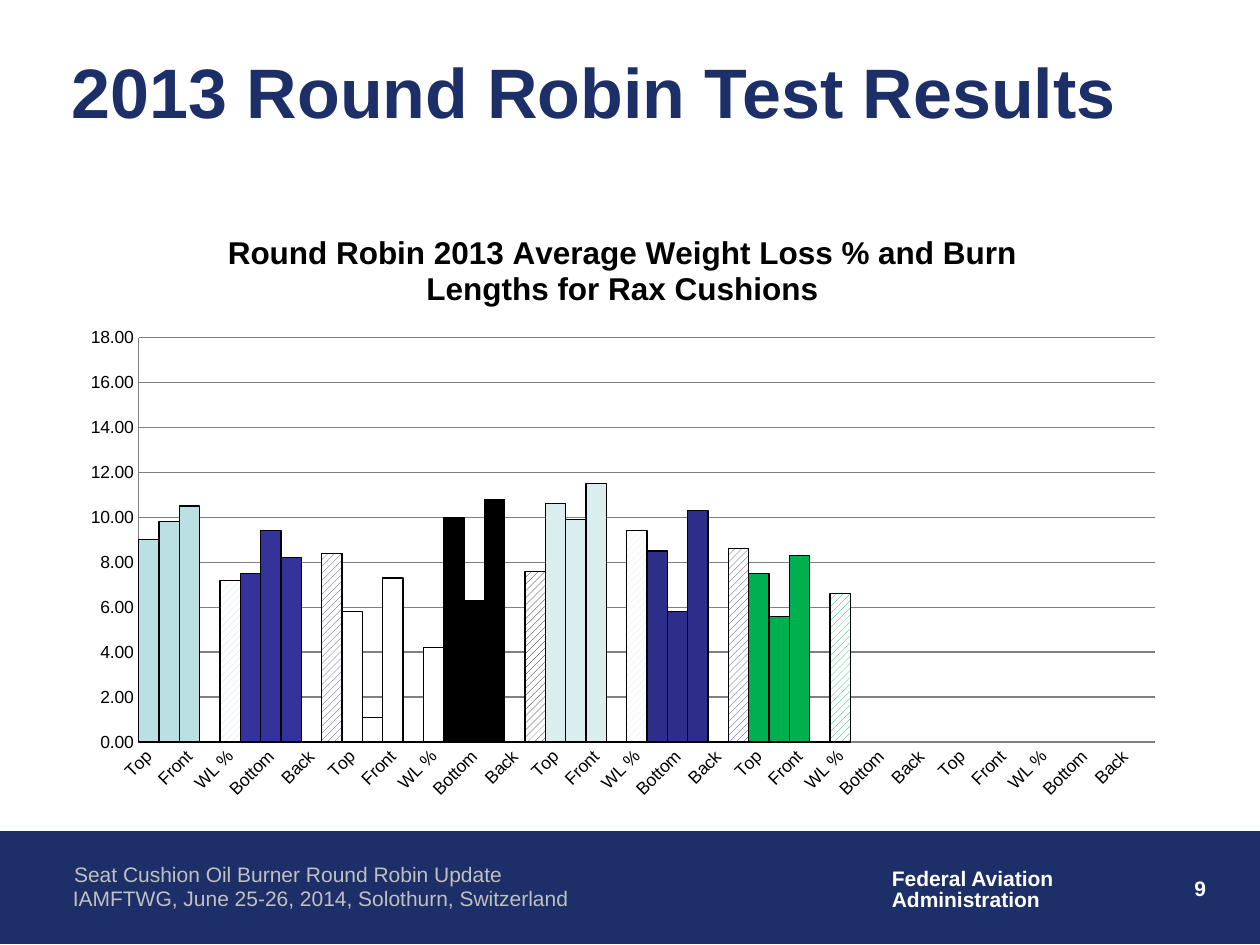
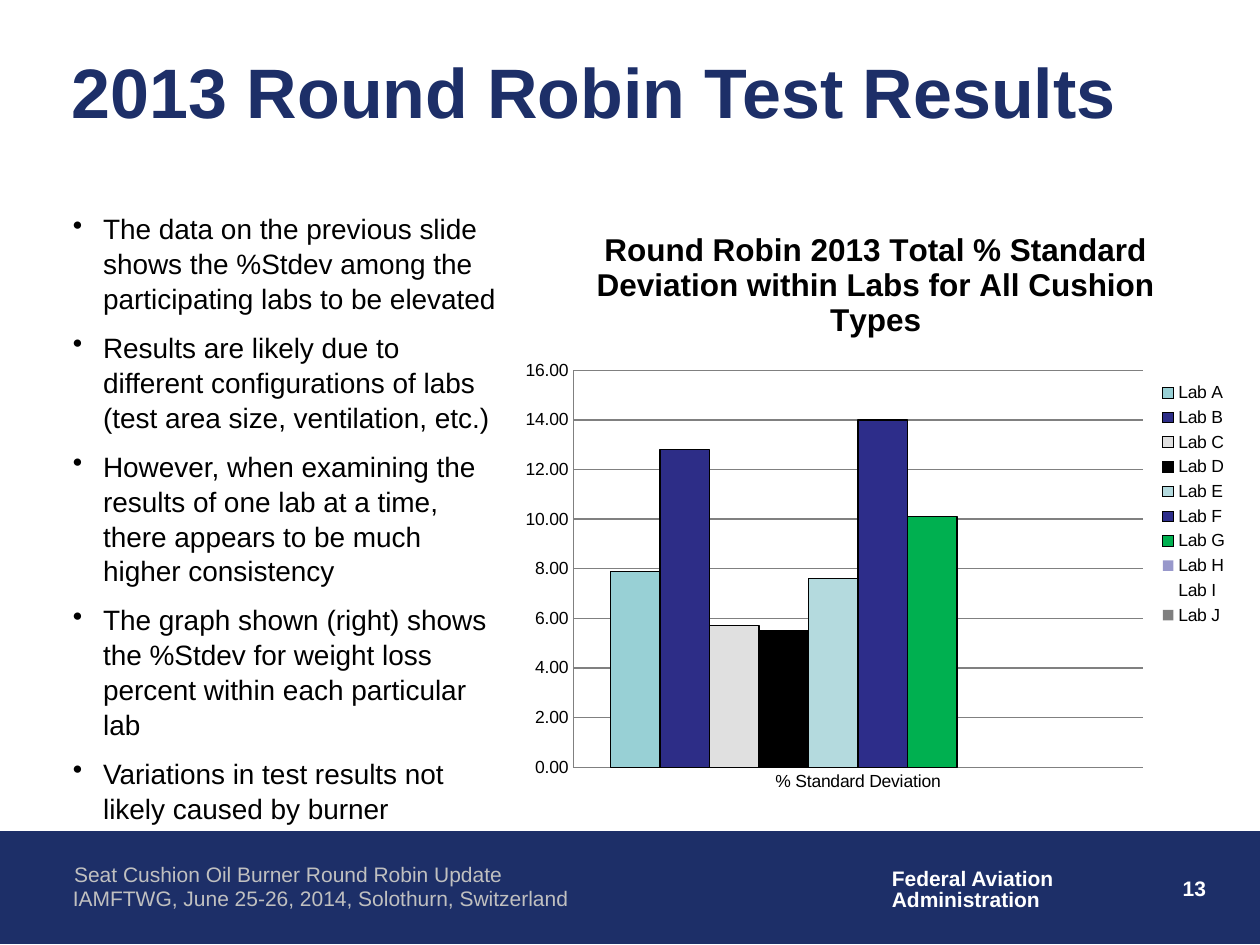
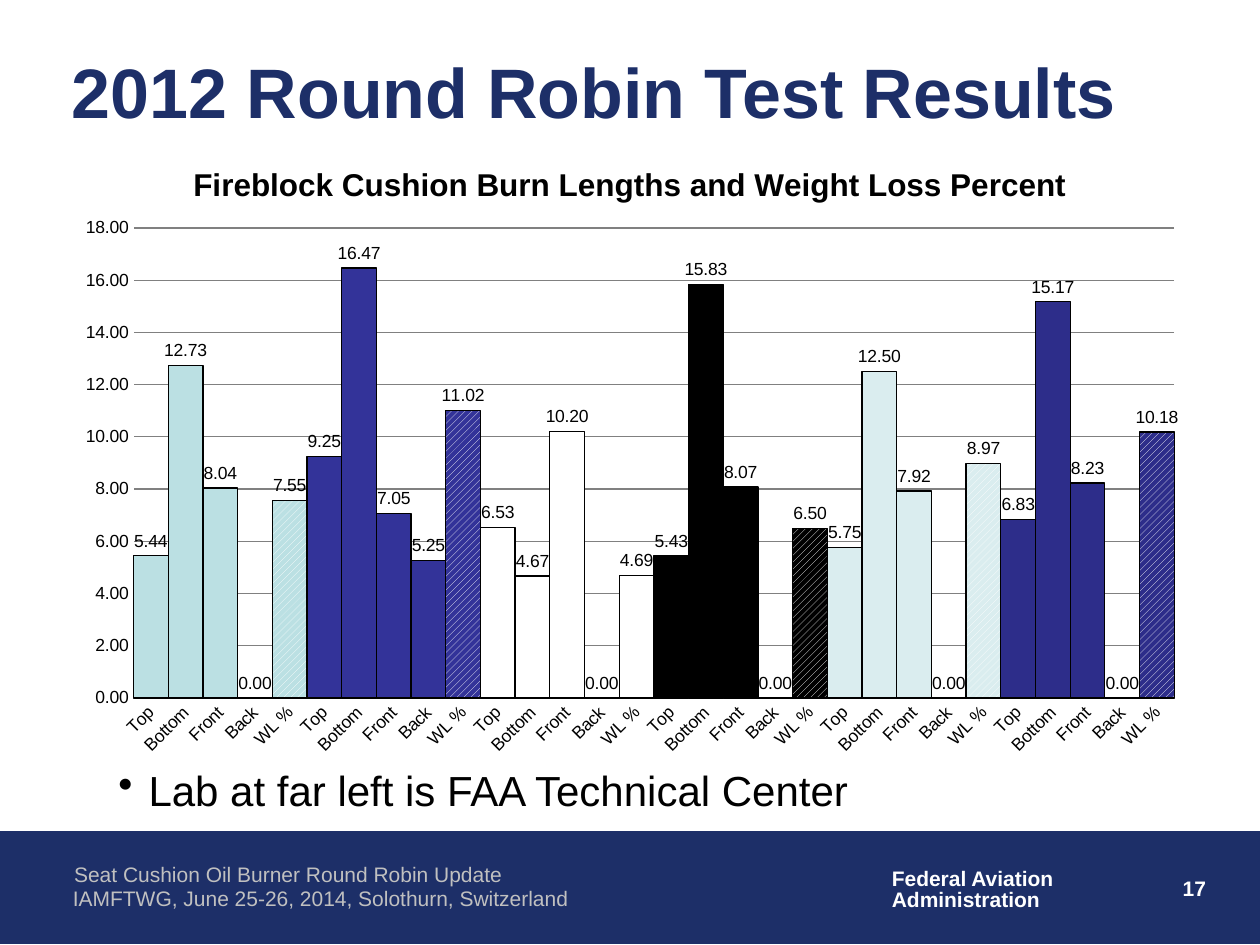
from lxml import etree
from pptx import Presentation
from pptx.chart.data import CategoryChartData
from pptx.dml.color import RGBColor
from pptx.enum.chart import XL_CHART_TYPE, XL_LABEL_POSITION, XL_LEGEND_POSITION, XL_TICK_MARK
from pptx.enum.dml import MSO_PATTERN
from pptx.enum.shapes import MSO_SHAPE
from pptx.enum.text import MSO_ANCHOR, MSO_AUTO_SIZE, PP_ALIGN
from pptx.oxml import parse_xml
from pptx.oxml.ns import nsdecls, qn
from pptx.util import Inches, Pt

FONT = "Arial"
NAVY = "1D2F68"
WHITE = "FFFFFF"
SILVER = "C0C0C0"
BLACK = "000000"
GRID = "808080"
LAB_COLORS = ["BBE0E3", "333399", WHITE, BLACK, "DAEDEF", "2D2D8A", "00B050"]
SIDES = ["Top", "Bottom", "Front", "Back", "WL %"]
INDENT = 0.24


def rgb(value):
    return RGBColor.from_string(value)


def add_text(page, place, lines, size, color, bold=False, align=PP_ALIGN.LEFT,
             spacing=None, bullet=False, wrap=True):
    box = page.shapes.add_textbox(*map(Inches, place))
    frame = box.text_frame
    frame.word_wrap = wrap
    for index, line in enumerate(lines):
        para = frame.paragraphs[0] if index == 0 else frame.add_paragraph()
        if bullet:
            props = para._p.get_or_add_pPr()
            props.set("marL", str(Inches(INDENT)))
            props.set("indent", str(-Inches(INDENT)))
            etree.SubElement(props, qn("a:buChar")).set("char", "•")
            if index:
                para.space_before = Pt(size / 2)
        para.alignment = align
        if spacing:
            para.line_spacing = spacing
        span = para.add_run()
        span.text = line
        span.font.name = FONT
        span.font.size = Pt(size)
        span.font.bold = bold
        span.font.color.rgb = rgb(color)


dax_values = [
    9, 9.8, 10.5, 0, 7.2,
    7.5, 9.4, 8.2, 0, 8.4,
    5.8, 1.1, 7.3, 0, 4.2,
    10, 6.3, 10.8, 0, 7.6,
    10.6, 9.9, 11.5, 0, 9.4,
    8.5, 5.8, 10.3, 0, 8.6,
    7.5, 5.6, 8.3, 0, 6.6,
] + [None] * 15
fireblock_values = [
    5.44, 12.73, 8.04, 0, 7.55,
    9.25, 16.47, 7.05, 5.25, 11.02,
    6.53, 4.67, 10.2, 0, 4.69,
    5.43, 15.83, 8.07, 0, 6.5,
    5.75, 12.5, 7.92, 0, 8.97,
    6.83, 15.17, 8.23, 0, 10.18,
]
deviations = [7.9, 12.8, 5.7, 5.5, 7.6, 14, 10.1, None, None, None]

slides = [
    {
        "number": "9",
        "title": "2013 Round Robin Test Results",
        "chart_title": "Round Robin 2013 Average Weight Loss % and Burn Lengths for Rax Cushions",
        "place": (0.54, 1.65, 8.8, 4.8),
        "plot": (1.1, 2.68, 8.07, 3.21),
        "categories": SIDES * 10,
        "series": [("Series 1", dax_values)],
        "max": 18, "gap": 0, "overlap": 0,
    },
    {
        "number": "13",
        "title": "2013 Round Robin Test Results",
        "chart_title": "Round Robin 2013 Total % Standard Deviation within Labs for All Cushion Types",
        "place": (4.05, 1.62, 5.8, 4.76),
        "plot": (4.55, 2.94, 4.52, 3.15),
        "categories": ["% Standard Deviation"],
        "series": [(f"Lab {letter}", [value]) for letter, value in zip("ABCDEFGHIJ", deviations)],
        "max": 16, "gap": 150, "overlap": 0,
        "bullets": [
            "The data on the previous slide shows the %Stdev among the participating labs to be elevated",
            "Results are likely due to different configurations of labs (test area size, ventilation, etc.)",
            "However, when examining the results of one lab at a time, there appears to be much higher consistency",
            "The graph shown (right) shows the %Stdev for weight loss percent within each particular lab",
            "Variations in test results not likely caused by burner",
        ],
        "bullet_place": (0.48, 1.62, 3.57, 5.49), "bullet_size": 16, "bullet_spacing": 1.04,
    },
    {
        "number": "17",
        "title": "2012 Round Robin Test Results",
        "chart_title": "Fireblock Cushion Burn Lengths and Weight Loss Percent",
        "place": (0.5, 1.1, 9, 5),
        "plot": (1.06, 1.81, 8.26, 3.73),
        "categories": SIDES * 6,
        "series": [("Series 1", fireblock_values)],
        "max": 18, "gap": 0, "overlap": -25, "labels": True,
        "bullets": ["Lab at far left is FAA Technical Center"],
        "bullet_place": (0.84, 6.02, 8.41, 0.51), "bullet_size": 24, "bullet_spacing": None,
    },
]

deck = Presentation()
deck.slide_width = Inches(10)
deck.slide_height = Inches(7.5)

for content in slides:
    page = deck.slides.add_slide(deck.slide_layouts[5])

    band = page.shapes.add_shape(MSO_SHAPE.RECTANGLE, *map(Inches, (0, 6.6, 10, 0.89)))
    band.shadow.inherit = False
    band.fill.solid()
    band.fill.fore_color.rgb = rgb(NAVY)
    band.line.color.rgb = rgb(NAVY)
    band.line.width = Pt(0.75)
    add_text(page, (7.59, 6.9, 2.08, 0.5), [content["number"]], 12, WHITE, bold=True,
             align=PP_ALIGN.RIGHT)
    add_text(page, (6.98, 6.85, 1.5, 0.44), ["Federal Aviation", "Administration"], 12, WHITE,
             bold=True, spacing=0.85, wrap=False)
    add_text(page, (0.49, 6.79, 5.23, 0.3), ["Seat Cushion Oil Burner Round Robin Update"], 12, SILVER)
    add_text(page, (0.48, 6.98, 4.28, 0.3), ["IAMFTWG, June 25-26, 2014, Solothurn, Switzerland"],
             12, SILVER, wrap=False)

    title = page.shapes.title
    title.left, title.top, title.width, title.height = map(Inches, (0.47, 0.38, 9.27, 0.67))
    title.text_frame.auto_size = MSO_AUTO_SIZE.NONE
    title.text_frame.vertical_anchor = MSO_ANCHOR.MIDDLE
    para = title.text_frame.paragraphs[0]
    para.alignment = PP_ALIGN.LEFT
    span = para.add_run()
    span.text = content["title"]
    span.font.name = FONT
    span.font.size = Pt(40)
    span.font.bold = True
    span.font.color.rgb = rgb(NAVY)

    if "bullets" in content:
        add_text(page, content["bullet_place"], content["bullets"], content["bullet_size"], BLACK,
                 spacing=content["bullet_spacing"], bullet=True)

    data = CategoryChartData(number_format="0.00")
    data.categories = content["categories"]
    for name, values in content["series"]:
        data.add_series(name, values)
    left, top, width, height = content["place"]
    chart = page.shapes.add_chart(XL_CHART_TYPE.COLUMN_CLUSTERED,
                                  *map(Inches, content["place"]), data).chart
    chart.font.name = FONT
    chart.font.size = Pt(10)
    chart.font.color.rgb = rgb(BLACK)

    chart.has_title = True
    span = chart.chart_title.text_frame.paragraphs[0].add_run()
    span.text = content["chart_title"]
    span.font.name = FONT
    span.font.size = Pt(18)
    span.font.bold = True
    span.font.color.rgb = rgb(BLACK)

    plot_left, plot_top, plot_width, plot_height = content["plot"]
    plot_area = chart._chartSpace.chart.plotArea
    for old_layout in plot_area.findall(qn("c:layout")):
        plot_area.remove(old_layout)
    plot_area.insert(0, parse_xml(
        f'<c:layout {nsdecls("c")}><c:manualLayout><c:layoutTarget val="inner"/>'
        '<c:xMode val="edge"/><c:yMode val="edge"/>'
        f'<c:x val="{(plot_left - left) / width:.4f}"/><c:y val="{(plot_top - top) / height:.4f}"/>'
        f'<c:w val="{plot_width / width:.4f}"/><c:h val="{plot_height / height:.4f}"/>'
        '</c:manualLayout></c:layout>'))

    value_axis = chart.value_axis
    value_axis.minimum_scale = 0
    value_axis.maximum_scale = content["max"]
    value_axis.major_unit = 2
    value_axis.has_major_gridlines = True
    value_axis.tick_labels.number_format = "0.00"
    value_axis.tick_labels.number_format_is_linked = False
    for line in (value_axis.major_gridlines.format.line, value_axis.format.line,
                 chart.category_axis.format.line):
        line.color.rgb = rgb(GRID)
        line.width = Pt(0.75)
    for axis in (value_axis, chart.category_axis):
        axis.major_tick_mark = XL_TICK_MARK.NONE
        axis.minor_tick_mark = XL_TICK_MARK.NONE
        axis.tick_labels.font.size = Pt(10)

    plot = chart.plots[0]
    plot.vary_by_categories = False
    plot.gap_width = content["gap"]
    plot.overlap = content["overlap"]
    chart.has_legend = len(plot.series) > 1

    if chart.has_legend:
        chart.legend.position = XL_LEGEND_POSITION.RIGHT
        chart.legend.include_in_layout = False
        chart.legend.font.size = Pt(10)
        for series, color in zip(plot.series, LAB_COLORS + ["333399", WHITE, BLACK]):
            fill = series.format.fill
            fill.solid()
            fill.fore_color.rgb = rgb(color)
            if series.values[0] is None:
                tint = fill._xPr.find(".//" + qn("a:srgbClr"))
                etree.SubElement(tint, qn("a:alpha")).set("val", "50000")
                series.format.line.fill.background()
                continue
            if color in LAB_COLORS[:3] + LAB_COLORS[4:5]:
                fill.fore_color.brightness = -0.12
            series.format.line.color.rgb = rgb(BLACK)
            series.format.line.width = Pt(0.75)
        continue

    chart.category_axis._element.find(".//" + qn("a:bodyPr")).set("rot", "-2700000")
    series = plot.series[0]
    series.format.fill.solid()
    series.format.fill.fore_color.rgb = rgb(LAB_COLORS[0])
    series.format.line.color.rgb = rgb(BLACK)
    series.format.line.width = Pt(0.75)
    for index, value in enumerate(series.values):
        if not value:
            continue
        color = LAB_COLORS[index // len(SIDES)]
        point = series.points[index].format
        if SIDES[index % len(SIDES)] == "WL %":
            stripe, ground = (WHITE, color) if "labels" in content else (color, WHITE)
            point.fill.patterned()
            point.fill.pattern = MSO_PATTERN.WIDE_UPWARD_DIAGONAL
            point.fill.fore_color.rgb = rgb(stripe)
            point.fill.back_color.rgb = rgb(ground)
        else:
            point.fill.solid()
            point.fill.fore_color.rgb = rgb(color)
        point.line.color.rgb = rgb(BLACK)
        point.line.width = Pt(0.75)

    if "labels" in content:
        value_axis.format.line.fill.background()
        plot.has_data_labels = True
        labels = plot.data_labels
        labels.show_value = True
        labels.number_format = "0.00"
        labels.number_format_is_linked = False
        labels.position = XL_LABEL_POSITION.OUTSIDE_END
        labels.font.size = Pt(10)

deck.save("out.pptx")
